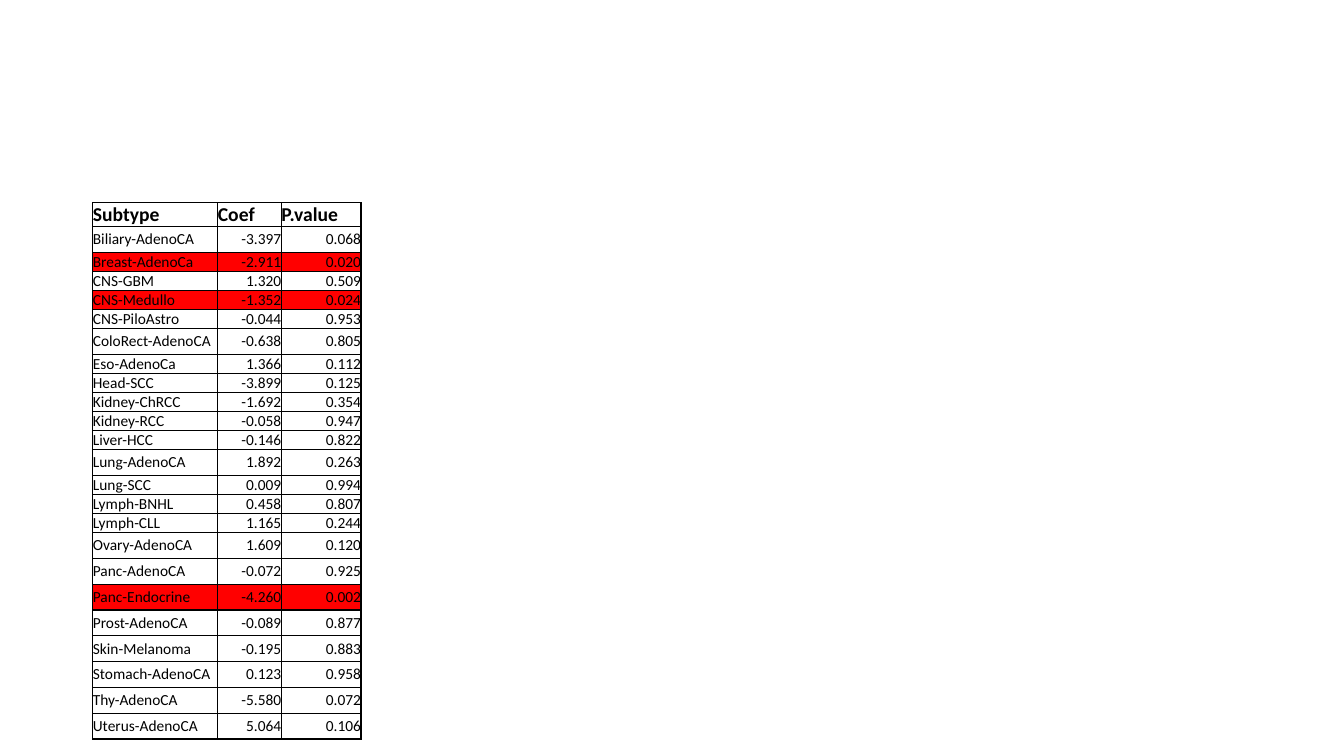
from dataclasses import dataclass

from lxml.etree import SubElement
from pptx import Presentation
from pptx.dml.color import RGBColor
from pptx.enum.text import MSO_ANCHOR, PP_ALIGN
from pptx.oxml.ns import qn
from pptx.util import Cm, Pt

# Content: subtype, coefficient, p-value
HEADINGS = ("Subtype", "Coef", "P.value")
RESULTS = [
    ("Biliary-AdenoCA", "-3.397", "0.068"),
    ("Breast-AdenoCa", "-2.911", "0.020"),
    ("CNS-GBM", "1.320", "0.509"),
    ("CNS-Medullo", "-1.352", "0.024"),
    ("CNS-PiloAstro", "-0.044", "0.953"),
    ("ColoRect-AdenoCA", "-0.638", "0.805"),
    ("Eso-AdenoCa", "1.366", "0.112"),
    ("Head-SCC", "-3.899", "0.125"),
    ("Kidney-ChRCC", "-1.692", "0.354"),
    ("Kidney-RCC", "-0.058", "0.947"),
    ("Liver-HCC", "-0.146", "0.822"),
    ("Lung-AdenoCA", "1.892", "0.263"),
    ("Lung-SCC", "0.009", "0.994"),
    ("Lymph-BNHL", "0.458", "0.807"),
    ("Lymph-CLL", "1.165", "0.244"),
    ("Ovary-AdenoCA", "1.609", "0.120"),
    ("Panc-AdenoCA", "-0.072", "0.925"),
    ("Panc-Endocrine", "-4.260", "0.002"),
    ("Prost-AdenoCA", "-0.089", "0.877"),
    ("Skin-Melanoma", "-0.195", "0.883"),
    ("Stomach-AdenoCA", "0.123", "0.958"),
    ("Thy-AdenoCA", "-5.580", "0.072"),
    ("Uterus-AdenoCA", "5.064", "0.106"),
]
SIGNIFICANCE = 0.05
TALL_ENDINGS = ("AdenoCA", "Endocrine", "Melanoma")

# Geometry
LEFT, TOP = Cm(2.34), Cm(5.11)
COLUMN_WIDTHS = (Cm(3.15), Cm(1.6), Cm(2.01))
HEADING_HEIGHT, SHORT_HEIGHT, TALL_HEIGHT = Cm(0.6), Cm(0.48), Cm(0.65)


@dataclass(frozen=True)
class Theme:
    font: str = "Calibri"
    ink: str = "000000"
    highlight: str = "FF0000"
    heading_size: int = 14
    body_size: int = 11
    border: int = 1


THEME = Theme()


def draw_borders(cell):
    properties = cell._tc.get_or_add_tcPr()
    for side in ("lnL", "lnR", "lnT", "lnB"):
        line = SubElement(properties, qn(f"a:{side}"), w=str(Pt(THEME.border)))
        fill = SubElement(line, qn("a:solidFill"))
        SubElement(fill, qn("a:srgbClr"), val=THEME.ink)


def write_cell(cell, text, *, size=THEME.body_size, bold=False,
               align=PP_ALIGN.LEFT, fill=None):
    cell.margin_left = cell.margin_right = cell.margin_top = cell.margin_bottom = 0
    cell.vertical_anchor = MSO_ANCHOR.MIDDLE
    draw_borders(cell)
    if fill:
        cell.fill.solid()
        cell.fill.fore_color.rgb = RGBColor.from_string(fill)
    else:
        cell.fill.background()
    para = cell.text_frame.paragraphs[0]
    para.alignment = align
    span = para.add_run()
    span.text = text
    span.font.name = THEME.font
    span.font.size = Pt(size)
    span.font.bold = bold
    span.font.color.rgb = RGBColor.from_string(THEME.ink)


def add_results_table(page):
    heights = [HEADING_HEIGHT] + [
        TALL_HEIGHT if subtype.endswith(TALL_ENDINGS) else SHORT_HEIGHT
        for subtype, _, _ in RESULTS
    ]
    table = page.shapes.add_table(len(heights), len(HEADINGS), LEFT, TOP,
                                  sum(COLUMN_WIDTHS), sum(heights)).table
    table.first_row = table.horz_banding = False
    for column, width in zip(table.columns, COLUMN_WIDTHS):
        column.width = width
    for row, height in zip(table.rows, heights):
        row.height = height

    # Heading row
    for column, heading in enumerate(HEADINGS):
        write_cell(table.cell(0, column), heading,
                   size=THEME.heading_size, bold=True)

    # Result rows, significant ones highlighted
    for row, result in enumerate(RESULTS, start=1):
        fill = THEME.highlight if float(result[-1]) < SIGNIFICANCE else None
        for column, text in enumerate(result):
            write_cell(table.cell(row, column), text, fill=fill,
                       align=PP_ALIGN.RIGHT if column else PP_ALIGN.LEFT)


def main():
    deck = Presentation()
    deck.slide_width, deck.slide_height = Cm(33.87), Cm(19.05)
    page = deck.slides.add_slide(deck.slide_layouts.get_by_name("Blank"))
    add_results_table(page)
    deck.save("out.pptx")


if __name__ == "__main__":
    main()
